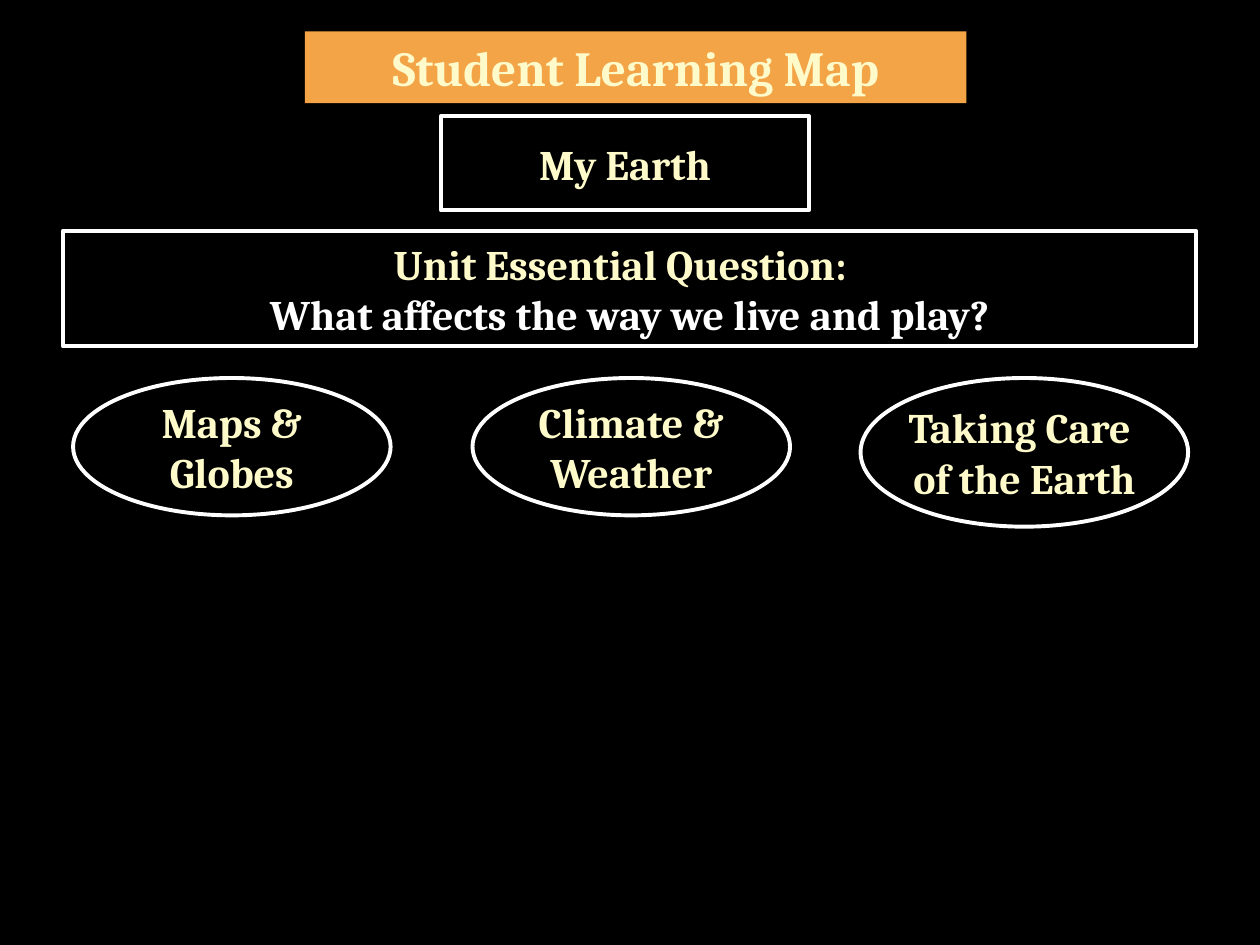
from pptx import Presentation
from pptx import util as u
from pptx.dml.color import RGBColor
from pptx.enum import shapes, text

COLORS = {"background": "000000", "outline": "FFFFFF", "cream": "FEFAC9",
          "white": "FFFFFF", "orange": "F3A447"}
FONT = "Cambria"

TOPICS = [
    (["Maps &", "Globes"], (0.58, 3, 2.52, 1.09)),
    (["Climate &", "Weather"], (3.75, 3, 2.52, 1.09)),
    (["Taking Care ", "of the Earth"], (6.83, 3, 2.6, 1.18)),
]
QUESTION = ["Unit Essential Question:  ", "What affects the way we live and play?"]
UNIT = ["My Earth"]
TITLE = ["Student Learning Map"]

OVAL = shapes.MSO_SHAPE.OVAL
RECT = shapes.MSO_SHAPE.RECTANGLE


def rgb(name):
    return RGBColor.from_string(COLORS[name])


def add_box(s, kind, box, lines, colors=("cream", "cream"), size=24, fill=None):
    sp = s.shapes.add_shape(kind, *(u.Inches(v) for v in box))
    sp.shadow.inherit = False
    if fill:
        sp.fill.solid()
        sp.fill.fore_color.rgb = rgb(fill)
        sp.line.fill.background()
    else:
        sp.fill.background()
        sp.line.color.rgb = rgb("outline")
        sp.line.width = u.Pt(2.25)
    tf = sp.text_frame
    tf.word_wrap = bool(fill)
    tf.vertical_anchor = text.MSO_ANCHOR.TOP if fill else text.MSO_ANCHOR.MIDDLE
    if fill:
        tf.auto_size = text.MSO_AUTO_SIZE.SHAPE_TO_FIT_TEXT
    tf.text = "\n".join(lines)
    for p, color in zip(tf.paragraphs, colors):
        p.alignment = text.PP_ALIGN.CENTER
        for r in p.runs:
            r.font.name = FONT
            r.font.size = u.Pt(size)
            r.font.bold = True
            r.font.color.rgb = rgb(color)


def main():
    prs = Presentation()
    prs.slide_width, prs.slide_height = u.Inches(10), u.Inches(7.5)
    s = prs.slides.add_slide(prs.slide_layouts[6])
    s.background.fill.solid()
    s.background.fill.fore_color.rgb = rgb("background")

    for lines, box in TOPICS:
        add_box(s, OVAL, box, lines)
    add_box(s, RECT, (0.5, 1.83, 8.99, 0.92), QUESTION, ("cream", "white"))
    add_box(s, RECT, (3.5, 0.92, 2.92, 0.75), UNIT)
    add_box(s, RECT, (2.42, 0.25, 5.25, 0.57), TITLE, size=28, fill="orange")

    prs.save("out.pptx")


if __name__ == "__main__":
    main()
